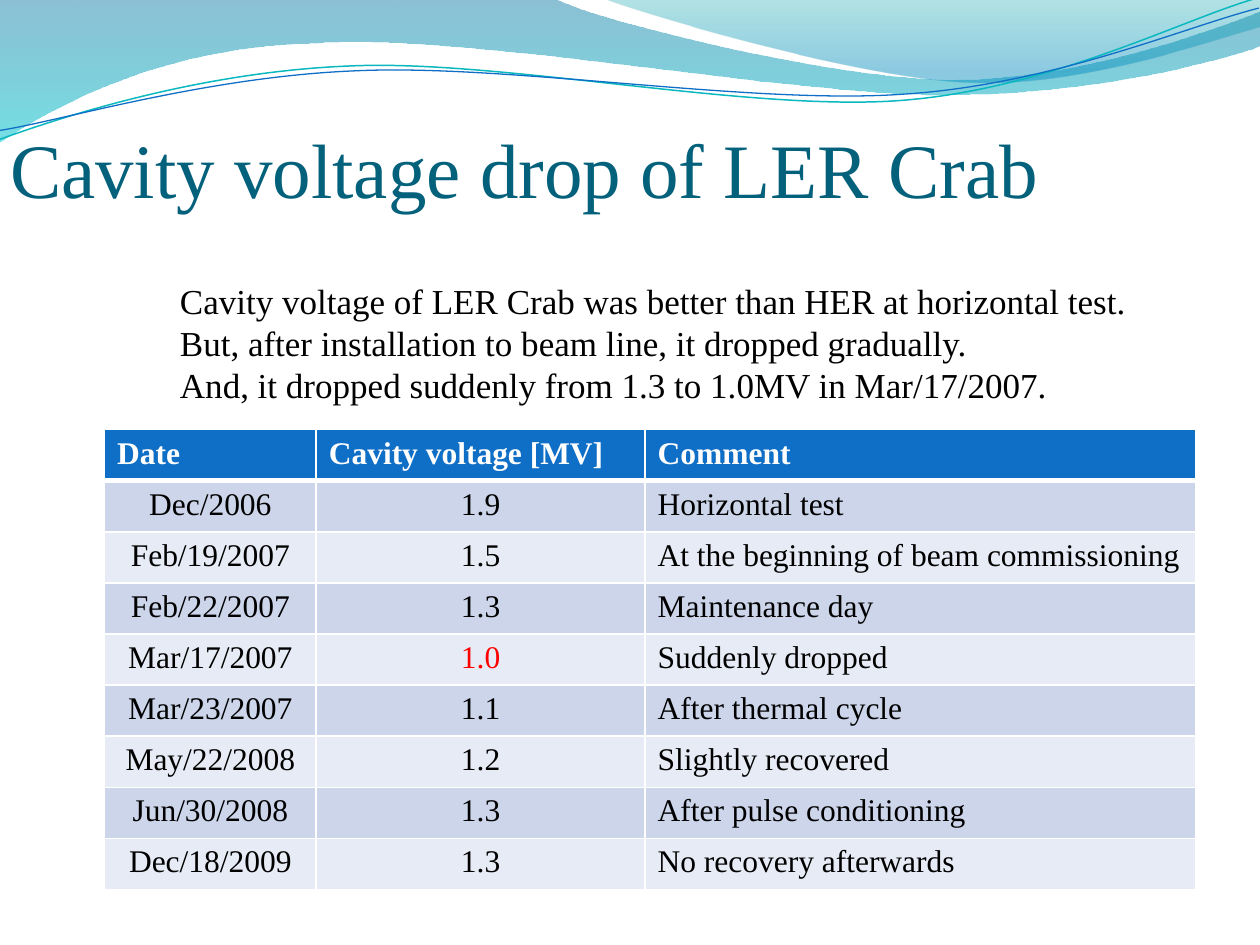
from dataclasses import dataclass

import pptx
import pptx.dml.color
import pptx.enum.text
import pptx.oxml
import pptx.oxml.ns
import pptx.util

Inches = pptx.util.Inches
Pt = pptx.util.Pt
RGB = pptx.dml.color.RGBColor.from_string
PP_ALIGN = pptx.enum.text.PP_ALIGN
qn = pptx.oxml.ns.qn
drawing = pptx.oxml.ns.nsdecls("a")


@dataclass
class Theme:
    font: str = "Times New Roman"
    title_size: int = 44
    body_size: int = 20
    table_size: int = 18
    title: str = "04617B"
    text: str = "000000"
    alert: str = "FF0000"
    header_text: str = "FFFFFF"
    header: str = "0F6FC6"
    border: str = "FFFFFF"
    bands: tuple = ("CCD5EA", "E7EBF5")
    back_wave: tuple = ((0, "0074A1", 45), (1, "00C6CF", 55))
    front_wave: tuple = ((0, "00A1A9", 30), (0.8, "008BBF", 45))
    teal_line: str = "0AB8BF"
    blue_line: str = "0F6FC6"


theme = Theme()
deck = pptx.Presentation()
deck.slide_width, deck.slide_height = Inches(10), Inches(7.5)
page = deck.slides.add_slide(deck.slide_layouts[6])


def draw_wave(segments, closed):
    points = [
        (Inches(x), Inches(y))
        for segment in segments for x, y in zip(segment[::2], segment[1::2])]
    builder = page.shapes.build_freeform(*points[0])
    builder.add_line_segments(points[1:], close=closed)
    wave = builder.convert_to_shape()
    wave.shadow.inherit = False
    steps = iter(wave.element.spPr.findall(".//" + qn("a:lnTo")))
    for segment in segments[1:]:
        step = next(steps)
        if len(segment) == 6:
            curve = pptx.oxml.parse_xml(f"<a:cubicBezTo {drawing}/>")
            step.addprevious(curve)
            for corner in (step, next(steps), next(steps)):
                curve.append(corner[0])
                corner.getparent().remove(corner)
    return wave


def style(para, size, color, bold=False):
    para.font.name = theme.font
    para.font.size = Pt(size)
    para.font.bold = bold
    para.font.color.rgb = RGB(color)


filled_waves = [
    (theme.back_wave, [
        (0, 0), (4.4, -0.01), (4.76, 0.17, 6.64, 0.63, 7.58, 0.63),
        (8.53, 0.63, 9.58, 0.26, 10, 0.09), (10.01, 0.36),
        (9.83, 0.44, 8.7, 0.76, 7.46, 0.75), (6.22, 0.75, 3.82, 0.28, 2.57, 0.34),
        (1.29, 0.36, 0.46, 0.83, -0.01, 1.13), (0, 0)]),
    (theme.front_wave, [
        (4.79, -0.01), (5.09, 0.11, 6.82, 0.62, 7.69, 0.65),
        (8.56, 0.69, 9.61, 0.32, 10, 0.21), (10, 0), (4.79, -0.01)]),
]
for stops, segments in filled_waves:
    wave = draw_wave(segments, True)
    wave.line.fill.background()
    wave.fill.gradient()
    wave.fill.gradient_angle = 270
    for stop, (position, color, _) in zip(wave.fill.gradient_stops, stops):
        stop.position = position
        stop.color.rgb = RGB(color)
    colors = wave.element.spPr.findall(".//" + qn("a:srgbClr"))
    for color, (_, _, opacity) in zip(colors, stops):
        color.append(pptx.oxml.parse_xml(f'<a:alpha {drawing} val="{opacity * 1000}"/>'))

line_waves = [
    (theme.teal_line, 0.85, [
        (-0.02, 0.87), (0.47, 0.72, 1.58, 0.41, 2.78, 0.42),
        (3.96, 0.42, 5.91, 0.93, 7.12, 0.9), (8.32, 0.87, 9.4, 0.36, 10, 0.22)]),
    (theme.blue_line, 0.75, [
        (-0.02, 0.8), (0.46, 0.75, 1.64, 0.45, 2.83, 0.46),
        (4.03, 0.46, 5.96, 0.88, 7.16, 0.85), (8.35, 0.83, 9.42, 0.42, 10.01, 0.3)]),
]
for color, width, segments in line_waves:
    wave = draw_wave(segments, False)
    wave.rotation = 357.3
    wave.fill.background()
    wave.line.color.rgb = RGB(color)
    wave.line.width = Pt(width)

title = page.shapes.add_textbox(Inches(0.08), Inches(0.83), Inches(9.61), Inches(0.87)).text_frame
title.word_wrap = True
title.vertical_anchor = pptx.enum.text.MSO_ANCHOR.BOTTOM
title.margin_left = title.margin_right = title.margin_bottom = 0
title.text = "Cavity voltage drop of LER Crab"
style(title.paragraphs[0], theme.title_size, theme.title)

rows = [
    ("Date", "Cavity voltage [MV]", "Comment"),
    ("Dec/2006", "1.9", "Horizontal test"),
    ("Feb/19/2007", "1.5", "At the beginning of beam commissioning"),
    ("Feb/22/2007", "1.3", "Maintenance day"),
    ("Mar/17/2007", "1.0", "Suddenly dropped"),
    ("Mar/23/2007", "1.1", "After thermal cycle"),
    ("May/22/2008", "1.2", "Slightly recovered"),
    ("Jun/30/2008", "1.3", "After pulse conditioning"),
    ("Dec/18/2009", "1.3", "No recovery afterwards"),
]
widths = (1.68, 2.61, 4.37)
table = page.shapes.add_table(
    len(rows), len(widths), Inches(0.83), Inches(3.41), Inches(sum(widths)), Inches(3.65)).table
for column, width in zip(table.columns, widths):
    column.width = Inches(width)
for row_index, row in enumerate(rows):
    is_header = row_index == 0
    borders = {"lnL": 1, "lnR": 1, "lnT": 3 if row_index == 1 else 1, "lnB": 3 if is_header else 1}
    for column_index, text in enumerate(row):
        cell = table.cell(row_index, column_index)
        cell.text = text
        cell.fill.solid()
        cell.fill.fore_color.rgb = RGB(theme.header if is_header else theme.bands[(row_index - 1) % 2])
        properties = cell._tc.get_or_add_tcPr()
        for place, (side, width) in enumerate(borders.items()):
            properties.insert(place, pptx.oxml.parse_xml(
                f'<a:{side} {drawing} w="{Pt(width)}"><a:solidFill>'
                f'<a:srgbClr val="{theme.border}"/></a:solidFill></a:{side}>'))
        para = cell.text_frame.paragraphs[0]
        body_color = theme.alert if text == "1.0" else theme.text
        style(para, theme.table_size, theme.header_text if is_header else body_color, is_header)
        if not is_header and column_index < 2:
            para.alignment = PP_ALIGN.CENTER

summary = page.shapes.add_textbox(Inches(1.33), Inches(2.17), Inches(7.76), Inches(1.11)).text_frame
summary.word_wrap = False
summary.auto_size = pptx.enum.text.MSO_AUTO_SIZE.SHAPE_TO_FIT_TEXT
summary.text = "\n".join([
    "Cavity voltage of LER Crab was better than HER at horizontal test.",
    "But, after installation to beam line, it dropped gradually.",
    "And, it dropped suddenly from 1.3 to 1.0MV in Mar/17/2007.",
])
for para in summary.paragraphs:
    style(para, theme.body_size, theme.text)

deck.save("out.pptx")
